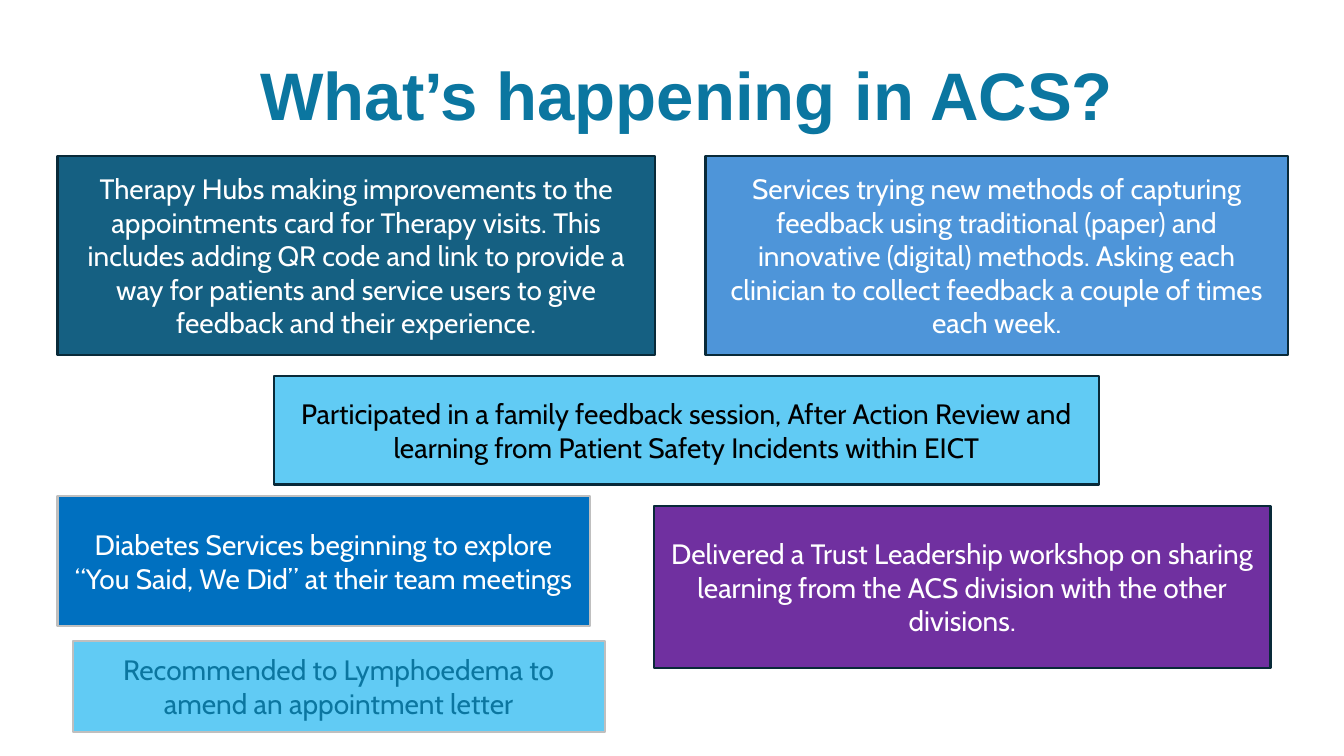
from pptx import Presentation
from pptx import util as u
from pptx.dml.color import RGBColor
from pptx.enum import shapes, text

COLOURS = {
    "teal": "156082", "sky": "4E95D9", "cyan": "61CBF4", "blue": "0070C0",
    "purple": "7030A0", "heading": "0B76A0", "navy": "092A39",
    "grey": "BFBFBF", "white": "FFFFFF", "black": "000000",
}

HEADING = "What’s happening in ACS?"
HEADING_BOX = (2.97, 1.45, 28.7, 5)

# Left edges, rows and sizes shared between the cards, in cm
MARGIN = 1.45
TOP_ROW, TOP_HEIGHT = 3.94, 5
SERVICE_WIDTH = 13.41

# Wording, (left, top, width, height) in cm, fill, outline, text colour
UPDATES = [
    ("Therapy Hubs making improvements to the appointments card for Therapy "
     "visits. This includes adding QR code and link to provide a way for "
     "patients and service users to give feedback and their experience.",
     (MARGIN, TOP_ROW, 15.06, TOP_HEIGHT), "teal", "navy", "white"),
    ("Services trying new methods of capturing feedback using traditional "
     "(paper) and innovative (digital) methods. Asking each clinician to "
     "collect feedback a couple of times each week.",
     (17.78, TOP_ROW, 14.68, TOP_HEIGHT), "sky", "navy", "white"),
    ("Participated in a family feedback session, After Action Review and "
     "learning from Patient Safety Incidents within EICT",
     (6.91, 9.47, 20.78, 2.74), "cyan", "navy", "black"),
    ("Diabetes Services beginning to explore “You Said, We Did” at their "
     "team meetings",
     (MARGIN, 12.5, SERVICE_WIDTH, 3.28), "blue", "grey", "white"),
    ("Delivered a Trust Leadership workshop on sharing learning from the ACS "
     "division with the other divisions.",
     (16.48, 12.75, 15.54, 4.09), "purple", "navy", "white"),
    ("Recommended to Lymphoedema to amend an appointment letter",
     (1.83, 16.15, SERVICE_WIDTH, 2.29), "cyan", "grey", "heading"),
]


def rgb(name):
    return RGBColor.from_string(COLOURS[name])


def write(frame, wording, font, size, colour, anchor, bold=False):
    """Put one centred run into a text frame and return its paragraph."""
    frame.word_wrap = True
    frame.auto_size = text.MSO_AUTO_SIZE.NONE
    frame.vertical_anchor = anchor
    paragraph = frame.paragraphs[0]
    paragraph.alignment = text.PP_ALIGN.CENTER
    run = paragraph.add_run()
    run.text = wording
    run.font.name = font
    run.font.size = u.Pt(size)
    run.font.bold = bold
    run.font.color.rgb = rgb(colour)
    return paragraph


def add_card(slide, wording, box, fill, outline, colour):
    card = slide.shapes.add_shape(
        shapes.MSO_SHAPE.RECTANGLE, *(u.Cm(length) for length in box))
    card.shadow.inherit = False
    card.fill.solid()
    card.fill.fore_color.rgb = rgb(fill)
    card.line.color.rgb = rgb(outline)
    card.line.width = u.Pt(1.5)
    write(card.text_frame, wording, "Cabin", 20, colour,
          text.MSO_ANCHOR.MIDDLE)


def main():
    deck = Presentation()
    deck.slide_width, deck.slide_height = u.Cm(33.87), u.Cm(19.05)
    slide = deck.slides.add_slide(deck.slide_layouts.get_by_name("Title Only"))

    # Heading
    heading = slide.shapes.title
    heading.left, heading.top, heading.width, heading.height = (
        u.Cm(length) for length in HEADING_BOX)
    line = write(heading.text_frame, HEADING, "Arial", 48, "heading",
                 text.MSO_ANCHOR.TOP, bold=True)
    line.line_spacing = 0.9

    # Update cards
    for update in UPDATES:
        add_card(slide, *update)

    deck.save("out.pptx")


if __name__ == "__main__":
    main()
